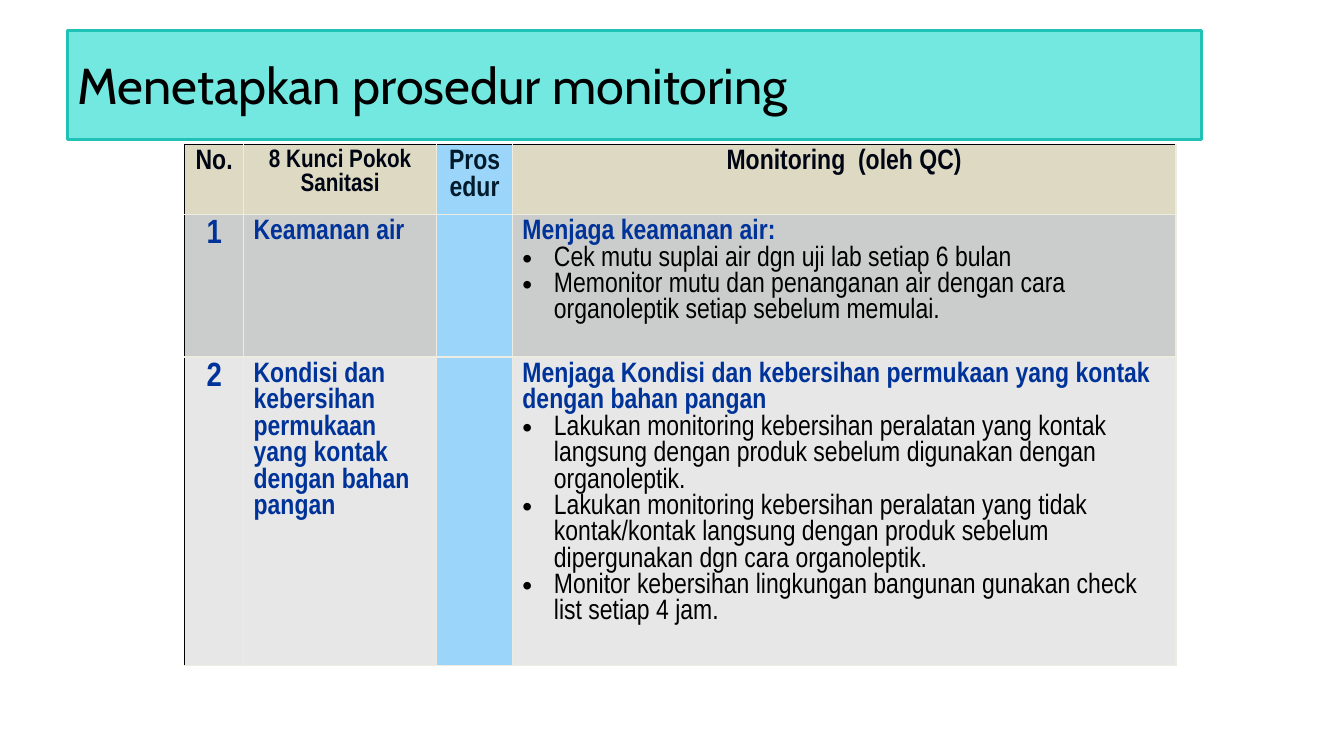
"""Build a slide with a title bar and a sanitation monitoring table."""
from lxml.etree import SubElement
from pptx import Presentation
from pptx.dml.color import RGBColor
from pptx.enum.shapes import MSO_SHAPE as Shape
from pptx.enum.text import MSO_ANCHOR as Anchor, PP_ALIGN as Align
from pptx.oxml.ns import qn
from pptx.util import Pt

TITLE = "Menetapkan prosedur monitoring"
HEADERS = [("No.", 20, "000514"), ("8 Kunci Pokok Sanitasi", 18, "000514"),
           ("Prosedur", 20, "021B2B"), ("Monitoring  (oleh QC)", 20, "000514")]
KEYS = [
    ("1", "Keamanan air", "Menjaga keamanan air:", [
        "Cek mutu suplai air dgn uji lab setiap 6 bulan",
        "Memonitor mutu dan penanganan air dengan cara organoleptik setiap sebelum memulai."]),
    ("2", "Kondisi dan kebersihan permukaan yang kontak dengan bahan pangan",
     "Menjaga Kondisi dan kebersihan permukaan yang kontak dengan bahan pangan", [
         "Lakukan monitoring kebersihan peralatan yang kontak langsung dengan produk "
         "sebelum digunakan dengan organoleptik.",
         "Lakukan monitoring kebersihan peralatan yang tidak kontak/kontak langsung dengan "
         "produk sebelum dipergunakan dgn cara organoleptik.",
         "Monitor kebersihan lingkungan bangunan gunakan check list setiap 4 jam."]),
]
COLUMNS = [42, 138, 54, 474]
ROWS = [50, 102, 220.5]
ROW_FILLS = ["DDD9C3", "CBCCCC", "E7E7E7"]
PROCEDURE_COLUMN, PROCEDURE_FILL = 2, "9BD5FA"
BLUE, BLACK, CREAM = "003399", "000000", "EEECE1"
INDENT = 22.5


def paint(target, color):
    """Give a fill a solid colour."""
    target.solid()
    target.fore_color.rgb = RGBColor.from_string(color)


def write(para, text, size=20, color=BLUE, font="Arial Narrow", bold=True,
          align=Align.LEFT, bullet=False):
    """Write one formatted paragraph."""
    para.alignment = align
    if bullet:
        props = para._p.get_or_add_pPr()
        props.set("marL", str(Pt(INDENT)))
        props.set("indent", str(-Pt(INDENT)))
        SubElement(props, qn("a:buFont"), typeface="Arial")
        SubElement(props, qn("a:buChar"), char="•")
    span = para.add_run()
    span.text = text
    span.font.name, span.font.size, span.font.bold = font, Pt(size), bold
    span.font.color.rgb = RGBColor.from_string(color)


def draw_borders(cell, **colors):
    """Draw the four cell borders."""
    props = cell._tc.get_or_add_tcPr()
    for side, color in colors.items():
        line = SubElement(props, qn(f"a:ln{side}"), w=str(Pt(1)))
        SubElement(SubElement(line, qn("a:solidFill")), qn("a:srgbClr"), val=color)


def add_title(page):
    """Add the title bar."""
    bar = page.shapes.add_shape(Shape.ROUND_2_DIAG_RECTANGLE,
                                Pt(48), Pt(21.6), Pt(810), Pt(78))
    bar.adjustments[0] = bar.adjustments[1] = 0
    bar.shadow.inherit = False
    paint(bar.fill, "72E8E0")
    paint(bar.line.fill, "20C2B6")
    bar.line.width = Pt(2)
    box = bar.text_frame
    box.word_wrap, box.vertical_anchor = True, Anchor.MIDDLE
    write(box.paragraphs[0], TITLE, size=36, color=BLACK, font="Cabin", bold=False)


def add_table(page):
    """Add the monitoring table."""
    table = page.shapes.add_table(len(ROWS), len(COLUMNS), Pt(132), Pt(103),
                                  Pt(sum(COLUMNS)), Pt(sum(ROWS))).table
    for column, width in zip(table.columns, COLUMNS):
        column.width = Pt(width)
    for row, height in zip(table.rows, ROWS):
        row.height = Pt(height)
    for r, row_fill in enumerate(ROW_FILLS):
        for c in range(len(COLUMNS)):
            cell = table.cell(r, c)
            draw_borders(cell, L=CREAM if c else BLACK, R=CREAM,
                         T=CREAM if r else BLACK, B=CREAM)
            paint(cell.fill, PROCEDURE_FILL if c == PROCEDURE_COLUMN else row_fill)
    for c, (text, size, color) in enumerate(HEADERS):
        write(table.cell(0, c).text_frame.paragraphs[0], text, size=size,
              color=color, align=Align.CENTER)
    for r, (number, key, heading, checks) in enumerate(KEYS, 1):
        write(table.cell(r, 0).text_frame.paragraphs[0], number, size=24,
              align=Align.CENTER)
        write(table.cell(r, 1).text_frame.paragraphs[0], key)
        box = table.cell(r, 3).text_frame
        write(box.paragraphs[0], heading)
        for check in checks:
            write(box.add_paragraph(), check, color=BLACK, bold=False, bullet=True)


def main():
    """Build and save the deck."""
    deck = Presentation()
    deck.slide_width, deck.slide_height = Pt(960), Pt(540)
    page = deck.slides.add_slide(deck.slide_layouts[6])
    add_title(page)
    add_table(page)
    deck.save("out.pptx")


if __name__ == "__main__":
    main()
